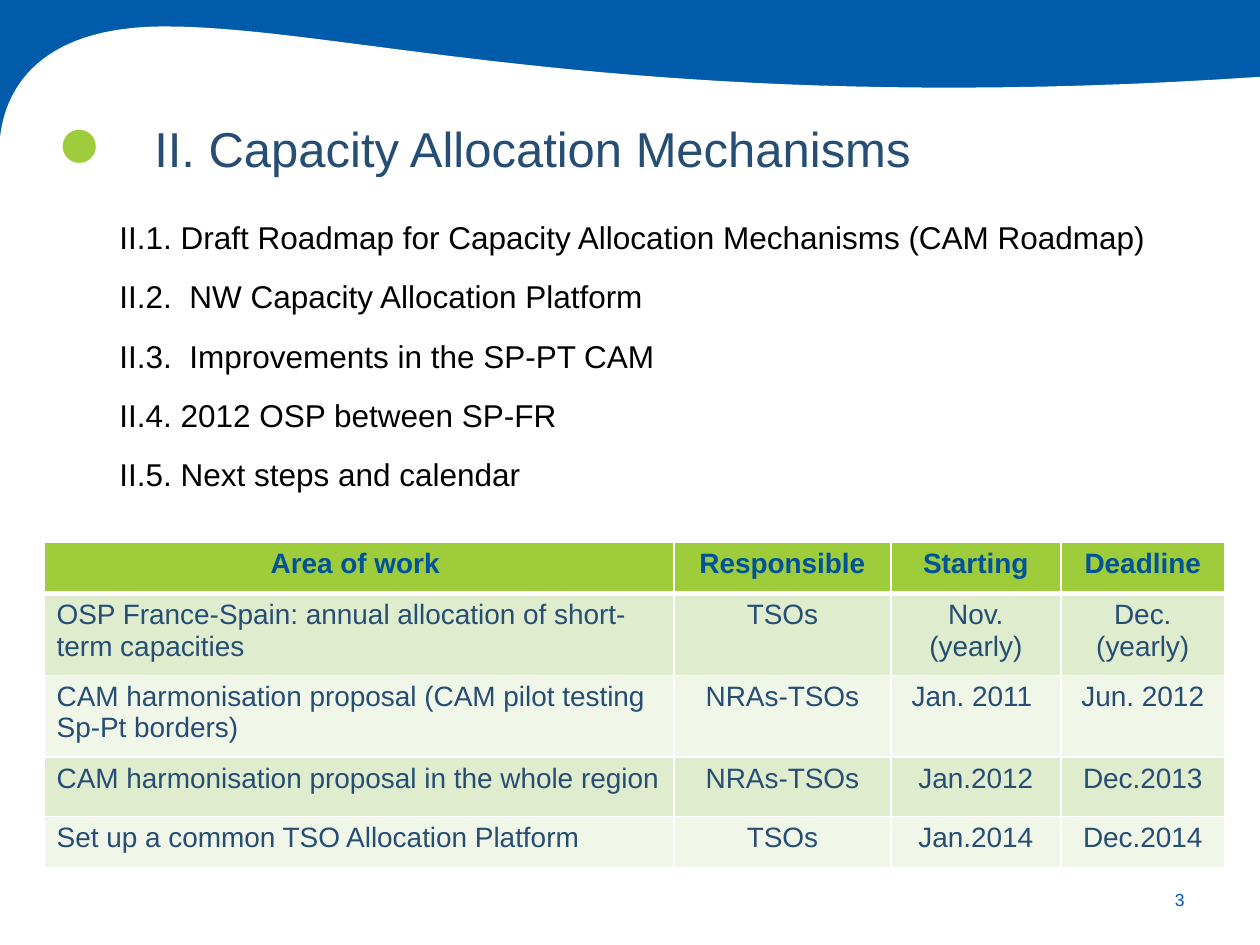
from lxml import etree
from pptx import Presentation
from pptx.dml.color import RGBColor
from pptx.enum.shapes import MSO_SHAPE
from pptx.enum.text import MSO_ANCHOR, PP_ALIGN
from pptx.oxml.ns import qn
from pptx.util import Inches, Pt

LEFT, CENTER, RIGHT = PP_ALIGN.LEFT, PP_ALIGN.CENTER, PP_ALIGN.RIGHT
TOP, MIDDLE, BOTTOM = MSO_ANCHOR.TOP, MSO_ANCHOR.MIDDLE, MSO_ANCHOR.BOTTOM
RECT = MSO_SHAPE.RECTANGLE

COLORS = {
    "blue": "005BAB", "navy": "264D74", "head": "00529B", "green": "9ECC3B",
    "pale": "DFECCE", "light": "F0F6E8", "white": "FFFFFF", "black": "000000",
}

# Lower edge of the banner, as Bezier segments from right to left
WAVE = [
    [(10, 0.61), (5.1, 0.94), (2.76, 0.21), (1.31, 0.21)],
    [(1.31, 0.21), (0.23, 0.21), (0.03, 0.79), (0, 1.1)],
]
TOPICS = [
    "II.1. Draft Roadmap for Capacity Allocation Mechanisms (CAM Roadmap)",
    "II.2.  NW Capacity Allocation Platform",
    "II.3.  Improvements in the SP-PT CAM",
    "II.4. 2012 OSP between SP-FR",
    "II.5. Next steps and calendar",
]
PLAN = [
    ["Area of work ", "Responsible", "Starting", "Deadline"],
    ["OSP France-Spain: annual allocation of short-term capacities",
     "TSOs", "Nov. (yearly)", "Dec. (yearly)"],
    ["CAM harmonisation proposal (CAM pilot testing Sp‐Pt borders)",
     "NRAs-TSOs", "Jan. 2011 ", "Jun. 2012"],
    ["CAM harmonisation proposal in the whole region",
     "NRAs-TSOs", "Jan.2012", "Dec.2013"],
    ["Set up a common TSO Allocation Platform",
     "TSOs", "Jan.2014", "Dec.2014"],
]
WIDTHS = [5, 1.72, 1.35, 1.3]
HEIGHTS = [0.41, 0.65, 0.65, 0.47, 0.41]


def rgb(name):
    return RGBColor.from_string(COLORS[name])


def write(frame, *lines, size, color, bold=False, align=LEFT, hang=None,
          spaced=False):
    """Fill a text frame, one paragraph a line; hang is (margin, indent)."""
    frame.word_wrap = True
    for i, line in enumerate(lines):
        para = frame.add_paragraph() if i else frame.paragraphs[0]
        para.alignment = align
        if hang:
            props = para._p.get_or_add_pPr()
            props.set("marL", str(Inches(hang[0])))
            props.set("indent", str(Inches(hang[1])))
        if spaced:
            para.line_spacing = 1.2
            para.space_after = Pt(2)
            if i:
                para.space_before = Pt(6)
        run = para.add_run()
        run.text = line
        font = run.font
        font.name, font.size, font.bold = "Arial", Pt(size), bold
        font.color.rgb = rgb(color)


def add_text(slide, box, *lines, anchor=TOP, **form):
    frame = slide.shapes.add_textbox(*map(Inches, box)).text_frame
    frame.vertical_anchor = anchor
    write(frame, *lines, **form)


def paint(shape, color):
    shape.shadow.inherit = False
    shape.fill.solid()
    shape.fill.fore_color.rgb = rgb(color)
    shape.line.fill.background()


def bezier(ends, steps=40):
    """Points along a cubic curve, without its first point."""
    a, b, c, d = ends
    for i in range(1, steps + 1):
        t = i / steps
        u = 1 - t
        yield tuple(
            u**3 * p + 3 * u * u * t * q + 3 * u * t * t * r + t**3 * s
            for p, q, r, s in zip(a, b, c, d))


def add_banner(slide):
    bar = slide.shapes.add_shape(RECT, 0, 0, Inches(10), Inches(1.15))
    paint(bar, "blue")
    pen = slide.shapes.build_freeform(Inches(10), Inches(0.61), scale=1.0)
    edge = [spot for part in WAVE for spot in bezier(part)]
    corners = [(0, 7.5), (10, 7.5)]
    pen.add_line_segments(
        [(Inches(x), Inches(y)) for x, y in edge + corners], close=True)
    paint(pen.convert_to_shape(), "white")


def add_border(cell, side, width):
    props = cell._tc.get_or_add_tcPr()
    line = etree.SubElement(props, qn("a:ln" + side), w=str(Pt(width)))
    fill = etree.SubElement(line, qn("a:solidFill"))
    etree.SubElement(fill, qn("a:srgbClr"), val=COLORS["white"])


def add_plan(slide):
    shape = slide.shapes.add_table(
        len(PLAN), len(WIDTHS), Inches(0.35), Inches(4.3),
        Inches(sum(WIDTHS)), Inches(sum(HEIGHTS)))
    table = shape.table
    for col, width in zip(table.columns, WIDTHS):
        col.width = Inches(width)
    for row, height in zip(table.rows, HEIGHTS):
        row.height = Inches(height)
    for r, texts in enumerate(PLAN):
        head = r == 0
        back = "green" if head else ("light", "pale")[r % 2]
        for c, text in enumerate(texts):
            cell = table.cell(r, c)
            # The rule under the header is thicker
            thick = {"T": r == 1, "B": head}
            for side in "LRTB":
                add_border(cell, side, 3 if thick.get(side) else 1)
            cell.fill.solid()
            cell.fill.fore_color.rgb = rgb(back)
            write(cell.text_frame, text, size=16, bold=head,
                  color="head" if head else "navy",
                  align=CENTER if head or c else LEFT)


def main():
    deck = Presentation()
    deck.slide_width, deck.slide_height = Inches(10), Inches(7.5)
    slide = deck.slides.add_slide(deck.slide_layouts[6])

    # Banner and page number
    add_banner(slide)
    add_text(slide, (8.94, 6.94, 0.56, 0.4), "3", size=10, color="blue",
             align=RIGHT, anchor=MIDDLE)

    # Title with its dot
    add_text(slide, (0.35, 0.57, 0.55, 0.94), "●", size=44, color="green",
             align=CENTER, anchor=BOTTOM, hang=(0.39, -0.39))
    add_text(slide, (-0.2, 0.8, 8.75, 0.67),
             "II. Capacity Allocation Mechanisms", size=28, color="navy",
             align=CENTER, hang=(0.39, -0.29), spaced=True)

    # Topics and work plan
    add_plan(slide)
    add_text(slide, (0.75, 1.62, 8.5, 2.37), *TOPICS, size=18, color="black",
             hang=(0.39, -0.29), spaced=True)

    deck.save("out.pptx")


if __name__ == "__main__":
    main()
